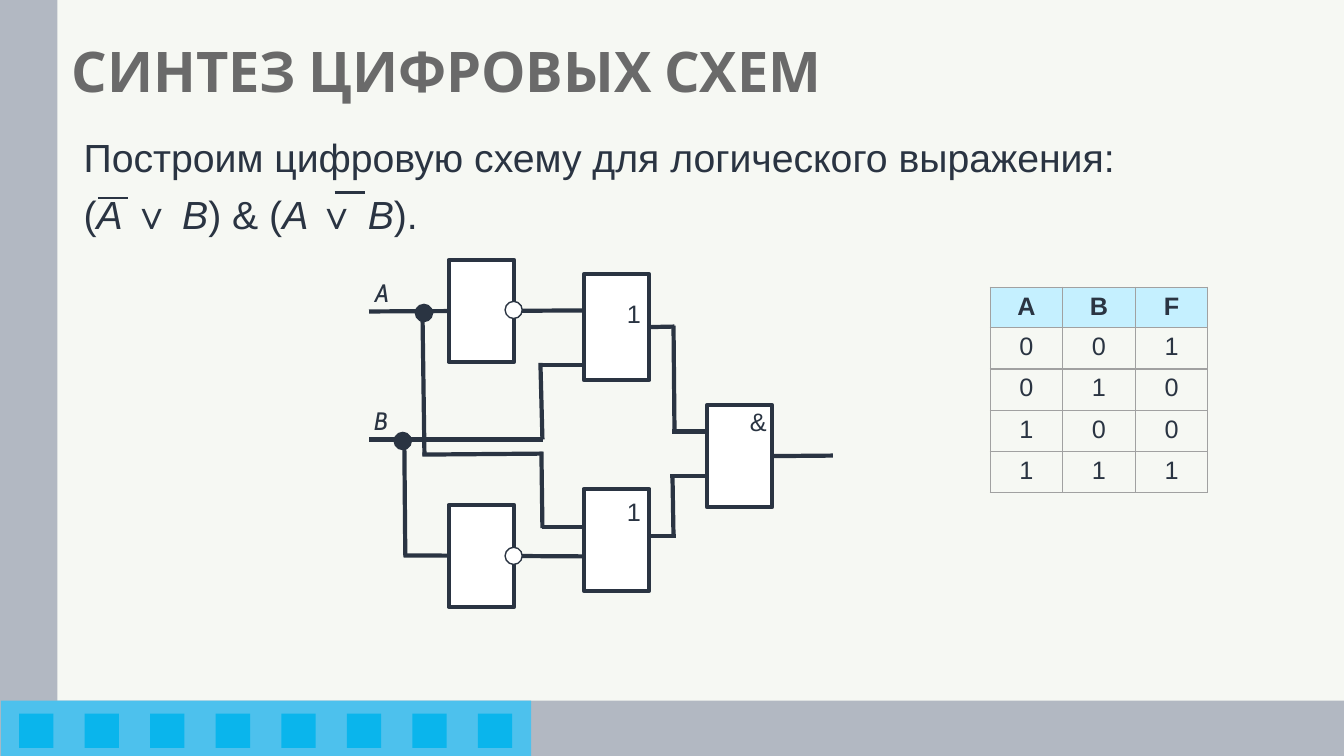
"""Build a slide on synthesising a digital circuit from a logical expression."""
from lxml import etree
from pptx import Presentation
from pptx.dml.color import RGBColor
from pptx.enum.shapes import MSO_CONNECTOR, MSO_SHAPE
from pptx.enum.text import MSO_ANCHOR, MSO_AUTO_SIZE, PP_ALIGN
from pptx.oxml.ns import qn
from pptx.util import Inches, Pt

RECTANGLE, OVAL = MSO_SHAPE.RECTANGLE, MSO_SHAPE.OVAL
STRAIGHT = MSO_CONNECTOR.STRAIGHT
RIGHT_SIDE = 3

COLORS = {
    "page": "F6F8F3", "band": "B2B8C2", "strip": "4DC1ED", "square": "0AB5EC",
    "title": "6A6A6A", "ink": "2A3442", "white": "FFFFFF",
    "header": "C5F0FF", "border": "A1A1A1",
}

TITLE = "СИНТЕЗ ЦИФРОВЫХ СХЕМ"
TASK = "Построим цифровую схему для логического выражения:"
FORMULA = [
    ("(", False), ("A ", True), ("∨ ", False), ("В", True), (") & (", False),
    ("A ", True), ("∨ ", False), ("В", True), (").", False),
]
OVERBARS = [(0.97, 1.96, 1.27, 1.96), (3.32, 1.91, 3.62, 1.91)]

BANDS = [
    (0, 0, 0.57, 7.5, "band"),
    (0, 6.95, 13.33, 0.57, "band"),
    (0.01, 6.95, 5.26, 0.57, "strip"),
]
SQUARE_COUNT, SQUARE_LEFT, SQUARE_TOP = 8, 0.19, 7.08
SQUARE_STEP, SQUARE_SIZE = 0.65, 0.34

WIRES = [
    (3.66, 3.09, 5.79, 3.08),
    (4.19, 3.08, 4.21, 4.52), (4.19, 4.51, 5.38, 4.5),
    (5.37, 4.48, 5.38, 5.24), (5.38, 5.23, 5.79, 5.23),
    (3.66, 4.36, 5.39, 4.36), (5.38, 4.36, 5.36, 3.6), (5.35, 3.62, 5.79, 3.62),
    (4.01, 4.36, 4.02, 5.51), (4, 5.51, 5.79, 5.52),
    (6.68, 3.23, 6.69, 4.28), (6.67, 4.28, 7.03, 4.28),
    (6.33, 5.32, 6.7, 5.32), (6.68, 5.32, 6.67, 4.72), (6.65, 4.72, 7.01, 4.72),
]
GATE_WIDTH = 0.65
GATES = {
    "not A": (4.45, 2.58, 1.01), "not B": (4.45, 5.01, 1.01),
    "or top": (5.79, 2.72, 1.05), "or bottom": (5.79, 4.85, 1.01),
    "and": (7.01, 4.02, 1.01),
}
OUTPUTS = [("or top", 6.69, 3.24), ("and", 8.26, 4.52)]
DOT_SIZE = 0.17
DOTS = [
    (5.01, 2.99, "white"), (5.01, 5.43, "white"),
    (4.12, 3.02, "ink"), (3.91, 4.29, "ink"),
]
LABELS = [
    ("A", 3.62, 2.7, "Cabin", True), ("B", 3.61, 3.97, "Cabin", True),
    ("1", 6.12, 2.91, "Arial", False), ("1", 6.12, 4.87, "Arial", False),
    ("&", 7.34, 3.98, "Arial", False),
]

TRUTH_TABLE = [
    ("А", "B", "F"), ("0", "0", "1"), ("0", "1", "0"), ("1", "0", "0"), ("1", "1", "1"),
]
COLUMN_WIDTH, HEADER_HEIGHT, ROW_HEIGHT = 0.72, 0.35, 0.41


def rgb(name):
    return RGBColor.from_string(COLORS[name])


def set_font(font, size, color, family="Arial", bold=False, italic=None):
    font.name, font.size, font.bold, font.italic = family, Pt(size), bold, italic
    font.color.rgb = rgb(color)


def place(shape, left, top, width, height):
    shape.left, shape.top = Inches(left), Inches(top)
    shape.width, shape.height = Inches(width), Inches(height)


def add_box(page, kind, left, top, width, height, fill, line_width=0):
    box = page.shapes.add_shape(
        kind, Inches(left), Inches(top), Inches(width), Inches(height))
    box.shadow.inherit = False
    box.fill.solid()
    box.fill.fore_color.rgb = rgb(fill)
    if line_width:
        box.line.color.rgb = rgb("ink")
        box.line.width = Pt(line_width)
    else:
        box.line.fill.background()
    return box


def add_wire(page, points, line_width=3):
    wire = page.shapes.add_connector(STRAIGHT, *[Inches(value) for value in points])
    wire.line.color.rgb = rgb("ink")
    wire.line.width = Pt(line_width)
    etree.SubElement(wire._element.spPr, qn("a:effectLst"))
    return wire


def add_text(page):
    title = page.shapes.title
    place(title, 0.61, 0.01, 11.88, 1.45)
    title.text_frame.text = TITLE
    title.text_frame.auto_size = MSO_AUTO_SIZE.NONE
    title.text_frame.vertical_anchor = MSO_ANCHOR.MIDDLE
    para = title.text_frame.paragraphs[0]
    para.alignment, para.line_spacing = PP_ALIGN.JUSTIFY, 0.9
    set_font(para.font, 40, "title", "Cabin", True)

    body = page.placeholders[1]
    place(body, 0.73, 1.33, 11.88, 1.45)
    frame = body.text_frame
    frame.auto_size = MSO_AUTO_SIZE.NONE
    frame.text = TASK
    formula = frame.add_paragraph()
    for text, italic in FORMULA:
        span = formula.add_run()
        span.text, span.font.italic = text, italic
    for para in frame.paragraphs:
        para.line_spacing, para.space_before = 0.9, Pt(10)
        set_font(para.font, 28, "ink")
        properties = para._p.get_or_add_pPr()
        properties.set("marL", "0")
        properties.set("indent", "0")
        properties.insert_element_before(
            properties.makeelement(qn("a:buNone"), {}), "a:tabLst", "a:defRPr")


def add_circuit(page):
    for points in OVERBARS:
        add_wire(page, points, 1.5)
    for points in WIRES:
        add_wire(page, points)
    gates = {
        name: add_box(page, RECTANGLE, left, top, GATE_WIDTH, height, "white", 3)
        for name, (left, top, height) in GATES.items()
    }
    for name, end_x, end_y in OUTPUTS:
        wire = add_wire(page, (end_x, end_y, end_x, end_y))
        wire.begin_connect(gates[name], RIGHT_SIDE)
    for left, top, fill in DOTS:
        add_box(page, OVAL, left, top, DOT_SIZE, DOT_SIZE, fill, 1)
    for text, left, top, family, italic in LABELS:
        label = page.shapes.add_textbox(
            Inches(left), Inches(top), Inches(0.3), Inches(0.4))
        label.text_frame.word_wrap = True
        label.text_frame.text = text
        set_font(label.text_frame.paragraphs[0].font, 18, "ink", family, italic=italic)


def add_borders(cell):
    properties = cell._tc.get_or_add_tcPr()
    for index, side in enumerate(("a:lnL", "a:lnR", "a:lnT", "a:lnB")):
        line = etree.Element(qn(side), w=str(Pt(1)))
        fill = etree.SubElement(line, qn("a:solidFill"))
        etree.SubElement(fill, qn("a:srgbClr"), val=COLORS["border"])
        properties.insert(index, line)


def add_truth_table(page):
    rows, columns = len(TRUTH_TABLE), len(TRUTH_TABLE[0])
    table = page.shapes.add_table(
        rows, columns, Inches(9.82), Inches(2.85), Inches(columns * COLUMN_WIDTH),
        Inches(HEADER_HEIGHT + (rows - 1) * ROW_HEIGHT)).table
    for column in table.columns:
        column.width = Inches(COLUMN_WIDTH)
    for row, values in enumerate(TRUTH_TABLE):
        table.rows[row].height = Inches(ROW_HEIGHT if row else HEADER_HEIGHT)
        for column, value in enumerate(values):
            cell = table.cell(row, column)
            cell.text = value
            para = cell.text_frame.paragraphs[0]
            para.alignment = PP_ALIGN.CENTER
            set_font(para.font, 18, "ink", bold=row == 0)
            if row:
                cell.fill.background()
            else:
                cell.fill.solid()
                cell.fill.fore_color.rgb = rgb("header")
            add_borders(cell)


def main():
    deck = Presentation()
    deck.slide_width, deck.slide_height = Inches(13.33), Inches(7.5)
    page = deck.slides.add_slide(deck.slide_layouts[1])
    page.background.fill.solid()
    page.background.fill.fore_color.rgb = rgb("page")
    for left, top, width, height, fill in BANDS:
        add_box(page, RECTANGLE, left, top, width, height, fill)
    for index in range(SQUARE_COUNT):
        add_box(page, RECTANGLE, SQUARE_LEFT + index * SQUARE_STEP, SQUARE_TOP,
                SQUARE_SIZE, SQUARE_SIZE, "square")
    add_text(page)
    add_circuit(page)
    add_truth_table(page)
    deck.save("out.pptx")


if __name__ == "__main__":
    main()
